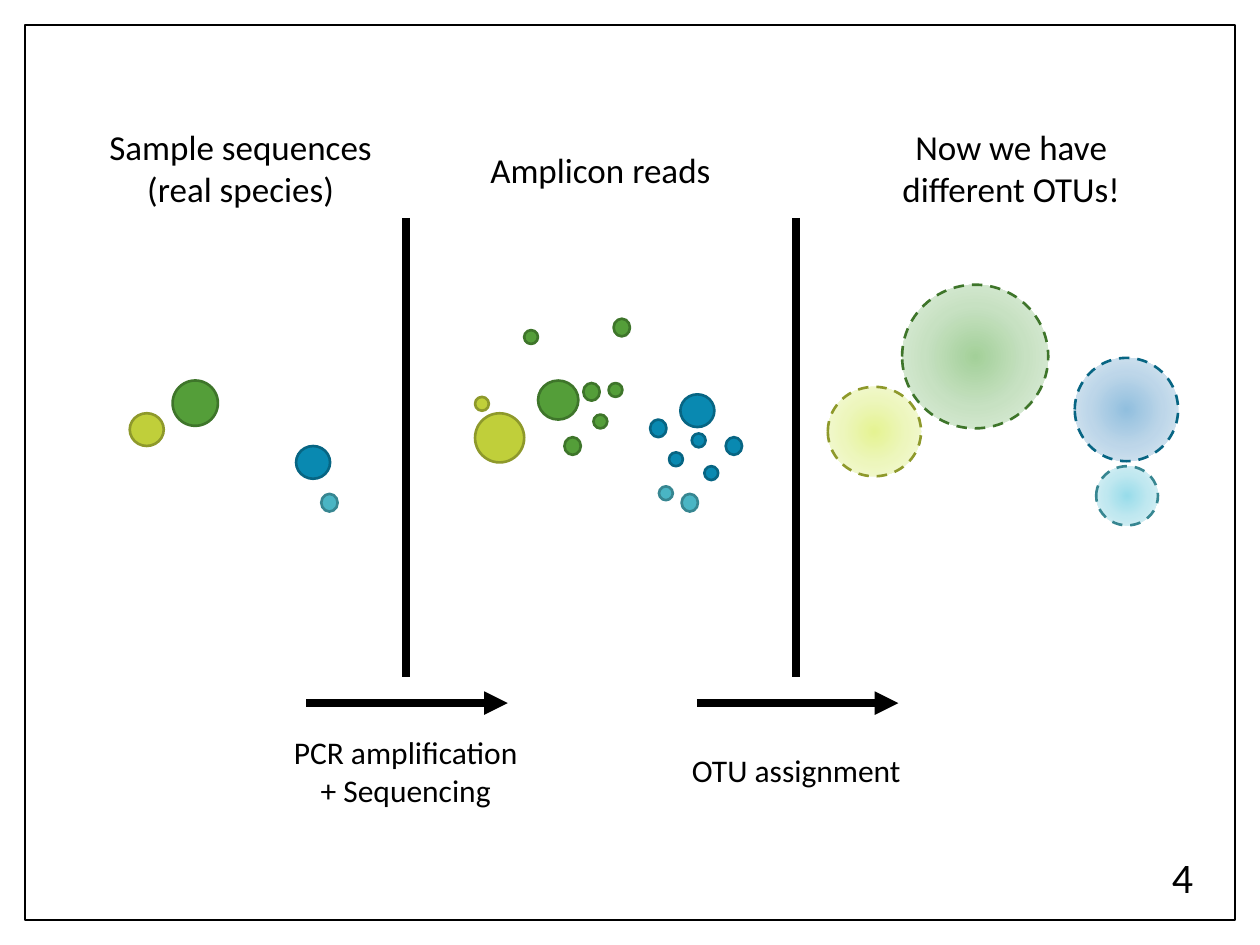
import pptx
import pptx.dml.color
import pptx.enum.dml
import pptx.enum.shapes
import pptx.enum.text
import pptx.oxml
import pptx.oxml.ns
import pptx.util

Inches = pptx.util.Inches
Pt = pptx.util.Pt
RGBColor = pptx.dml.color.RGBColor
MSO_SHAPE = pptx.enum.shapes.MSO_SHAPE
ANCHOR = pptx.enum.text.MSO_ANCHOR

BLACK = RGBColor(0x00, 0x00, 0x00)
WHITE = RGBColor(0xFF, 0xFF, 0xFF)
FILLS = {
    "green": RGBColor(0x54, 0x9E, 0x39),
    "yellow": RGBColor(0xC0, 0xCF, 0x3A),
    "blue": RGBColor(0x09, 0x89, 0xB1),
    "cyan": RGBColor(0x4A, 0xB5, 0xC4),
}
EDGES = {
    "green": RGBColor(0x3E, 0x75, 0x2A),
    "yellow": RGBColor(0x8E, 0x99, 0x2B),
    "blue": RGBColor(0x07, 0x65, 0x83),
    "cyan": RGBColor(0x37, 0x86, 0x91),
}
GLOWS = {
    "green": (RGBColor(0xA3, 0xD0, 0x99), RGBColor(0xC7, 0xE1, 0xC2), RGBColor(0xE3, 0xEF, 0xE1)),
    "yellow": (RGBColor(0xE5, 0xF3, 0x92), RGBColor(0xED, 0xF6, 0xBD), RGBColor(0xF6, 0xFA, 0xDF)),
    "blue": (RGBColor(0x91, 0xBF, 0xDE), RGBColor(0xBD, 0xD6, 0xE9), RGBColor(0xDF, 0xEB, 0xF3)),
    "cyan": (RGBColor(0x98, 0xDC, 0xEA), RGBColor(0xC0, 0xE8, 0xF0), RGBColor(0xE0, 0xF3, 0xF7)),
}

PANEL_TOP, PANEL_HEIGHT = 1.73, 3.64
SMALL = (0.11, 0.11)
MEDIUM = (0.13, 0.14)
LARGE = (0.27, 0.26)

SAMPLE = [
    ("green", 1.15, 1.29, (0.36, 0.36)),
    ("yellow", 0.81, 1.55, LARGE),
    ("blue", 2.13, 1.81, LARGE),
    ("cyan", 2.33, 2.19, MEDIUM),
]
READS = [
    ("green", 1.05, 1.29, (0.32, 0.31)),
    ("yellow", 0.55, 1.55, (0.39, 0.39)),
    ("blue", 2.18, 1.40, LARGE),
    ("cyan", 2.19, 2.19, MEDIUM),
    ("yellow", 0.55, 1.42, SMALL),
    ("green", 1.65, 0.80, MEDIUM),
    ("green", 0.94, 0.89, SMALL),
    ("green", 1.26, 1.74, MEDIUM),
    ("green", 1.41, 1.31, MEDIUM),
    ("green", 1.49, 1.56, SMALL),
    ("green", 1.61, 1.31, SMALL),
    ("blue", 2.09, 1.86, SMALL),
    ("blue", 1.94, 1.60, MEDIUM),
    ("blue", 2.37, 1.97, SMALL),
    ("blue", 2.27, 1.71, SMALL),
    ("blue", 2.54, 1.74, MEDIUM),
    ("cyan", 2.01, 2.13, SMALL),
]
OTUS = [
    ("green", 0.84, 0.53, (1.16, 1.14)),
    ("blue", 2.21, 1.11, (0.82, 0.82)),
    ("yellow", 0.25, 1.34, (0.74, 0.71)),
    ("cyan", 2.38, 1.97, (0.49, 0.47)),
]


def add_shape(s, kind, x, y, w, h, fill, edge, width):
    """Add a filled, outlined shape without shadow."""
    sp = s.shapes.add_shape(kind, Inches(x), Inches(y), Inches(w), Inches(h))
    sp.shadow.inherit = False
    sp.fill.solid()
    sp.fill.fore_color.rgb = fill
    sp.line.color.rgb = edge
    sp.line.width = Pt(width)
    return sp


def add_label(s, text, x, y, w, h, size, anchor=ANCHOR.TOP):
    """Add centred black text in a wrapping box."""
    tf = s.shapes.add_textbox(Inches(x), Inches(y), Inches(w), Inches(h)).text_frame
    tf.word_wrap = True
    tf.vertical_anchor = anchor
    tf.text = text
    for p in tf.paragraphs:
        p.alignment = pptx.enum.text.PP_ALIGN.CENTER
        p.font.size = Pt(size)
        p.font.name = "Calibri"
        p.font.color.rgb = BLACK


def add_line(s, x1, y1, x2, y2, arrow=False):
    """Add a thick black line, with an arrowhead at its end if asked."""
    c = s.shapes.add_connector(
        pptx.enum.shapes.MSO_CONNECTOR.STRAIGHT, Inches(x1), Inches(y1), Inches(x2), Inches(y2)
    )
    c.line.color.rgb = BLACK
    c.line.width = Pt(4.5)
    if arrow:
        ln = c.line._get_or_add_ln()
        ln.append(ln.makeelement(pptx.oxml.ns.qn("a:tailEnd"), {"type": "triangle"}))
    pr = c._element.spPr
    pr.append(pr.makeelement(pptx.oxml.ns.qn("a:effectLst"), {}))


def set_glow(sp, colors):
    """Give a shape a radial gradient from its centre and a dashed outline."""
    stops = "".join(
        f'<a:gs pos="{i * 50000}"><a:srgbClr val="{c}"/></a:gs>' for i, c in enumerate(colors)
    )
    grad = pptx.oxml.parse_xml(
        f'<a:gradFill {pptx.oxml.ns.nsdecls("a")} rotWithShape="1"><a:gsLst>{stops}</a:gsLst>'
        '<a:path path="circle"><a:fillToRect l="50000" t="50000" r="50000" b="50000"/></a:path>'
        "</a:gradFill>"
    )
    pr = sp._element.spPr
    pr.replace(pr.find(pptx.oxml.ns.qn("a:solidFill")), grad)
    sp.line.dash_style = pptx.enum.dml.MSO_LINE.DASH


def add_panel(s, left, top, heading, heading_box, circles, glow=False):
    """Place a heading and its circles relative to the panel's corner."""
    x, y, w, h = heading_box
    add_label(s, heading, left + x, top + y, w, h, 20)
    for name, x, y, (w, h) in circles:
        sp = add_shape(s, MSO_SHAPE.OVAL, left + x, top + y, w, h, FILLS[name], EDGES[name], 1.5)
        if glow:
            set_glow(sp, GLOWS[name])


def add_step(s, x, top, height, text, label_gap, label_height):
    """Place a divider with the arrow and label of the step below it."""
    bottom = top + height
    add_line(s, x, top, x, bottom)
    add_line(s, x - 0.79, bottom + 0.21, x + 0.81, bottom + 0.21, arrow=True)
    add_label(s, text, x - 0.99, bottom + label_gap, 1.98, label_height, 18)


def main():
    """Build the slide and save it."""
    prs = pptx.Presentation()
    prs.slide_width, prs.slide_height = Inches(10), Inches(7.5)
    s = prs.slides.add_slide(prs.slide_layouts[6])
    add_shape(s, MSO_SHAPE.RECTANGLE, 0.2, 0.2, 9.6, 7.1, WHITE, BLACK, 1)
    add_panel(s, 0.22, PANEL_TOP, "Sample sequences\n(real species)", (0.49, -0.78, 2.4, 0.77), SAMPLE)
    add_panel(s, 3.22, PANEL_TOP, "Amplicon reads", (0.45, -0.6, 2.19, 0.44), READS)
    add_panel(
        s, 6.32, PANEL_TOP, "Now we have different OTUs!", (0.61, -0.78, 2.19, 0.77), OTUS, glow=True
    )
    add_step(s, 3.22, PANEL_TOP, PANEL_HEIGHT, "PCR amplification + Sequencing", 0.4, 1.01)
    add_step(s, 6.32, PANEL_TOP, PANEL_HEIGHT, "OTU assignment", 0.54, 0.4)
    add_label(s, "4", 9.1, 6.76, 0.57, 0.4, 24, ANCHOR.MIDDLE)
    prs.save("out.pptx")


if __name__ == "__main__":
    main()
